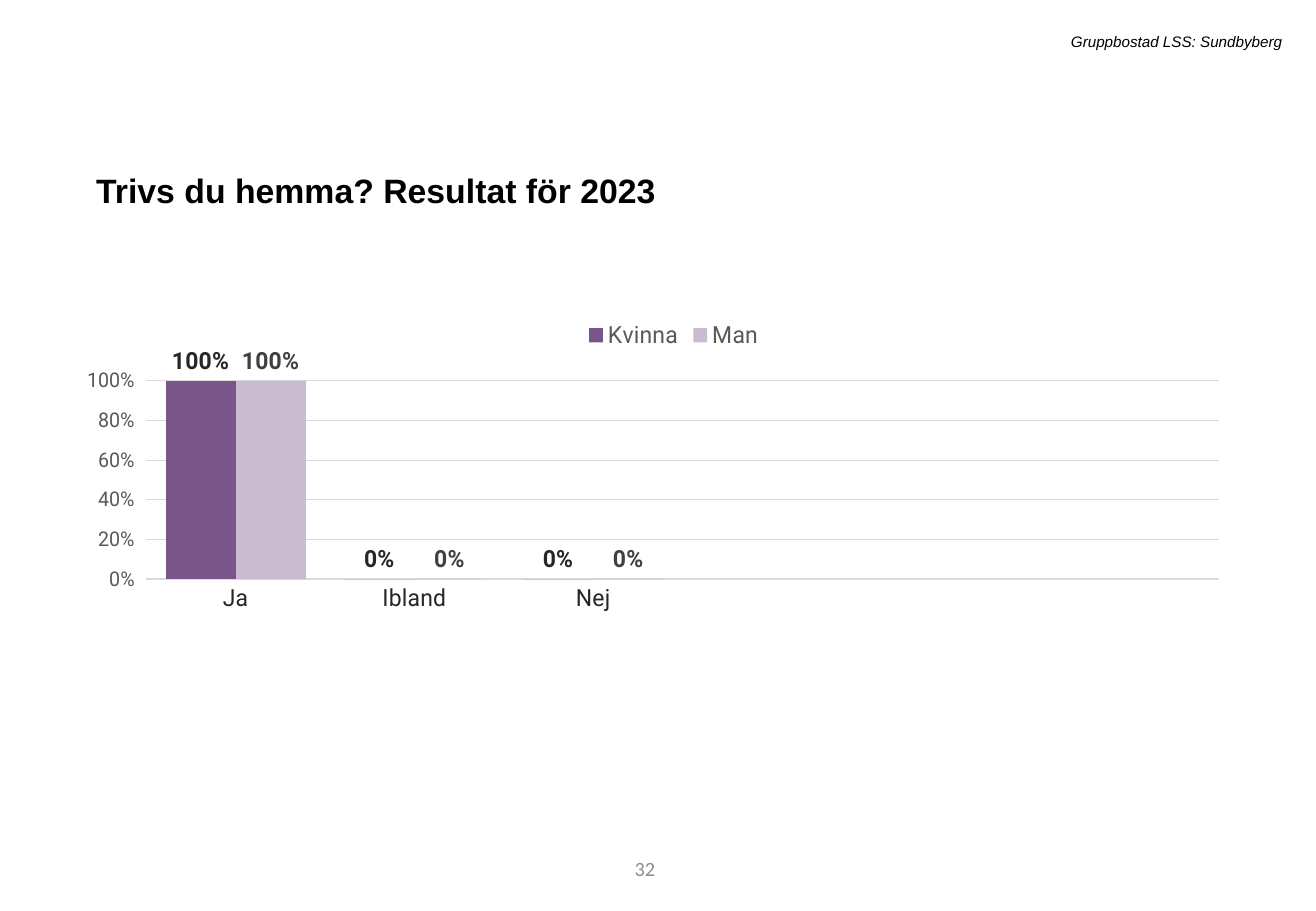
from dataclasses import dataclass

from lxml import etree
from pptx import Presentation
from pptx import util as u
from pptx.chart import data as cd
from pptx.dml.color import RGBColor
from pptx.enum import chart as ch
from pptx.enum import text as tx
from pptx.oxml.ns import qn

PX = 7526  # EMU per px


@dataclass(frozen=True)
class Theme:
    head: str = "Arial"
    plot: str = "Roboto"
    num: str = "Calibri"
    black: str = "000000"
    dark: str = "262626"
    mid: str = "404040"
    grey: str = "595959"
    pale: str = "8C8C8C"
    grid: str = "D9D9D9"
    plum: str = "7A5589"
    lilac: str = "CABBD0"
    title: int = 20
    label: int = 14
    small: int = 12
    base: int = 10
    note: int = 9


T = Theme()


def rgb(code):
    return RGBColor.from_string(code)


def style(font, name, size, color, bold=False, italic=False):
    font.name, font.size = name, u.Pt(size)
    font.bold, font.italic = bold, italic
    font.color.rgb = rgb(color)


def place(shape, box):
    shape.left, shape.top, shape.width, shape.height = [n * PX for n in box]


def write(shape, words, align, anchor, look, grow=True):
    frame = shape.text_frame
    frame.word_wrap = True
    frame.vertical_anchor = anchor
    if grow:
        frame.auto_size = tx.MSO_AUTO_SIZE.SHAPE_TO_FIT_TEXT
    para = frame.paragraphs[0]
    para.text, para.alignment = words, align
    style(para.font, **look)
    return para


def title(slide, box, words):
    shape = slide.shapes.title
    place(shape, box)
    para = write(shape, words, tx.PP_ALIGN.LEFT, tx.MSO_ANCHOR.TOP,
                 dict(name=T.head, size=T.title, color=T.black, bold=True))
    para.line_spacing, para.space_before = 1.2, u.Pt(10)


def note(slide, box, words, anchor, look, grow=True):
    shape = slide.shapes.add_textbox(*[n * PX for n in box])
    write(shape, words, tx.PP_ALIGN.RIGHT, anchor, look, grow)


def layout(chart, x, y, w, h):
    """Fix the inner plot area as shares of the chart."""
    area = chart._chartSpace.chart.plotArea
    for old in area.findall(qn("c:layout")):
        area.remove(old)
    outer = etree.Element(qn("c:layout"))
    inner = etree.SubElement(outer, qn("c:manualLayout"))
    parts = dict(layoutTarget="inner", xMode="edge", yMode="edge",
                 x=x, y=y, w=w, h=h)
    for tag, val in parts.items():
        etree.SubElement(inner, qn("c:" + tag)).set("val", str(val))
    area.insert(0, outer)


def bars(slide, box, cats, rows):
    data = cd.CategoryChartData(number_format="0%")
    data.categories = cats
    for name, vals, _, _ in rows:
        data.add_series(name, vals)
    chart = slide.shapes.add_chart(
        ch.XL_CHART_TYPE.COLUMN_CLUSTERED, *[n * PX for n in box], data).chart
    style(chart.font, T.plot, T.base, T.black)
    chart.has_title = False
    layout(chart, 0.025, 0.154, 0.966, 0.413)

    # Legend
    chart.has_legend = True
    chart.legend.position = ch.XL_LEGEND_POSITION.TOP
    chart.legend.include_in_layout = False
    style(chart.legend.font, T.plot, T.label, T.grey)

    # Axes
    cat, val = chart.category_axis, chart.value_axis
    style(cat.tick_labels.font, T.plot, T.label, T.dark)
    style(val.tick_labels.font, T.plot, T.small, T.grey)
    cat.major_tick_mark = ch.XL_TICK_MARK.NONE
    val.major_tick_mark = ch.XL_TICK_MARK.OUTSIDE
    val.minimum_scale, val.maximum_scale, val.major_unit = 0, 1, 0.2
    val.tick_labels.number_format = "0%"
    val.tick_labels.number_format_is_linked = False
    val.format.line.fill.background()
    val.has_major_gridlines = True
    for part in (cat, val.major_gridlines):
        part.format.line.color.rgb = rgb(T.grid)
        part.format.line.width = u.Pt(0.75)

    # Columns and their labels
    plot = chart.plots[0]
    plot.gap_width, plot.overlap, plot.vary_by_categories = 55, 0, False
    for item, (_, _, fill, ink) in zip(plot.series, rows):
        item.format.fill.solid()
        item.format.fill.fore_color.rgb = rgb(fill)
        labels = item.data_labels
        labels.show_value = True
        labels.number_format = "0%"
        labels.number_format_is_linked = False
        labels.position = ch.XL_LABEL_POSITION.OUTSIDE_END
        style(labels.font, T.plot, T.label, ink, bold=True)


def main():
    deck = Presentation()
    deck.slide_width, deck.slide_height = 1316 * PX, 911 * PX
    slide = deck.slides.add_slide(deck.slide_layouts[5])

    # Page number
    note(slide, (371, 844, 296, 49), "32", tx.MSO_ANCHOR.MIDDLE,
         dict(name=T.num, size=T.small, color=T.pale), grow=False)
    # Answers by gender
    blank = [None] * 3
    bars(slide, (87, 307, 1142, 480), ["Ja", "Ibland", "Nej", "", "", ""],
         [("Kvinna", [1, 0, 0] + blank, T.plum, T.dark),
          ("Man", [1, 0, 0] + blank, T.lilac, T.mid)])
    # Headings
    title(slide, (84, 156, 1142, 57), "Trivs du hemma? Resultat för 2023")
    note(slide, (217, 26, 1077, 30), "Gruppbostad LSS: Sundbyberg",
         tx.MSO_ANCHOR.TOP,
         dict(name=T.head, size=T.note, color=T.black, italic=True))

    deck.save("out.pptx")


if __name__ == "__main__":
    main()
